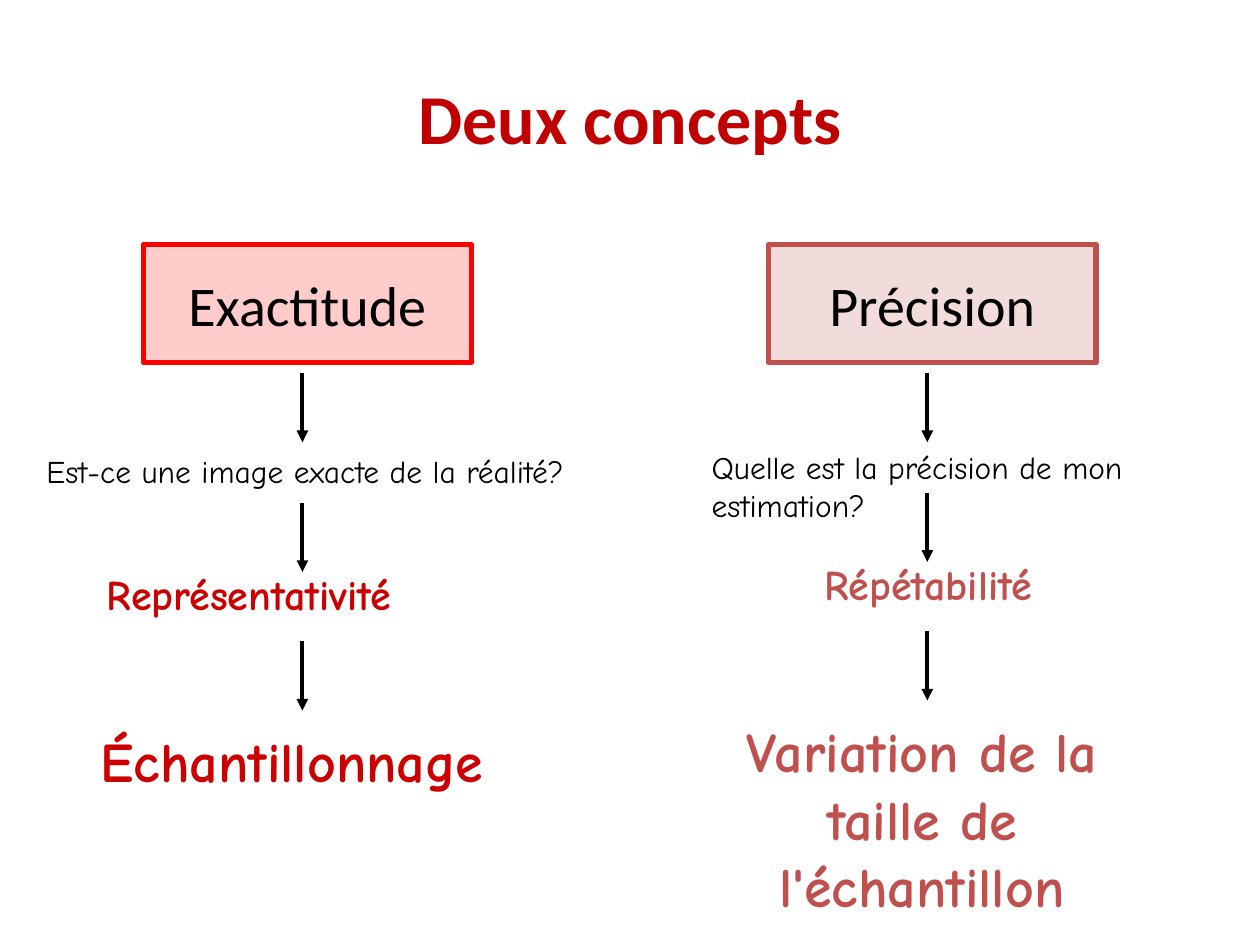
from dataclasses import dataclass

from lxml.etree import SubElement
from pptx import Presentation
from pptx.dml.color import RGBColor
from pptx.enum.shapes import MSO_CONNECTOR as Connector, MSO_SHAPE as Shape
from pptx.enum.text import MSO_ANCHOR as Anchor, PP_ALIGN as Align
from pptx.oxml.ns import qn
from pptx.util import Inches, Pt

COLORS = {
    "title": "C00000", "text": "000000", "accuracy": "FF0000",
    "accuracy_text": "CC0000", "precision": "C0504D",
}
TITLE_FONT, BODY_FONT = "Calibri", "Comic Neue"

presentation = Presentation()
presentation.slide_width, presentation.slide_height = Inches(10), Inches(7.5)
slide = presentation.slides.add_slide(presentation.slide_layouts[6])

# Grid of 100 columns and 75 rows; all places below are in its cells
COLUMN = presentation.slide_width / 100
ROW = presentation.slide_height / 75
BOX_TOP, BOX_WIDTH, BOX_HEIGHT = 19.4, 26, 9.4
BOX_OFFSET = 12.6
FIRST_ARROW, ARROW_LENGTH = 29.6, 5.5
LATER_ARROWS = (39.9, 50.9)


@dataclass(frozen=True)
class Area:
    left: float
    top: float
    width: float
    height: float

    def emu(self) -> tuple[int, ...]:
        return (round(self.left * COLUMN), round(self.top * ROW),
                round(self.width * COLUMN), round(self.height * ROW))


@dataclass(frozen=True)
class Label:
    text: str
    area: Area
    size: float
    color: str
    bold: bool = True
    align: Align = Align.CENTER
    font: str = BODY_FONT
    anchor: Anchor = Anchor.TOP


@dataclass(frozen=True)
class Concept:
    name: str
    axis: float
    rise: float
    color: str
    labels: tuple[Label, ...]


def write(shape, label: Label, wrap: bool = True) -> None:
    frame = shape.text_frame
    frame.word_wrap, frame.vertical_anchor = wrap, label.anchor
    paragraph = frame.paragraphs[0]
    paragraph.alignment = label.align
    run = paragraph.add_run()
    run.text = label.text
    formats = {"name": label.font, "size": Pt(label.size), "bold": label.bold}
    for attribute, value in formats.items():
        setattr(run.font, attribute, value)
    run.font.color.rgb = RGBColor.from_string(COLORS[label.color])


def add_label(label: Label) -> None:
    write(slide.shapes.add_textbox(*label.area.emu()), label)


def add_box(concept: Concept) -> None:
    area = Area(concept.axis - BOX_OFFSET, BOX_TOP, BOX_WIDTH, BOX_HEIGHT)
    shape = slide.shapes.add_shape(Shape.RECTANGLE, *area.emu())
    shape.shadow.inherit = False
    color = RGBColor.from_string(COLORS[concept.color])
    shape.fill.solid()
    shape.fill.fore_color.rgb = color
    fill_color = shape.fill._xPr.find(qn("a:solidFill"))[0]
    SubElement(fill_color, qn("a:alpha"), val="20000")
    shape.line.color.rgb, shape.line.width = color, Pt(3)
    write(shape, Label(concept.name, area, 32, "text", False,
                       font=TITLE_FONT, anchor=Anchor.MIDDLE), wrap=False)


def add_arrow(axis: float, top: float) -> None:
    x = round(axis * COLUMN)
    arrow = slide.shapes.add_connector(
        Connector.STRAIGHT, x, round(top * ROW),
        x, round((top + ARROW_LENGTH) * ROW))
    arrow.line.color.rgb = RGBColor.from_string(COLORS["text"])
    arrow.line.width = Pt(2.25)
    SubElement(arrow.line._get_or_add_ln(), qn("a:tailEnd"), type="triangle")
    SubElement(arrow._element.spPr, qn("a:effectLst"))


def add_concept(concept: Concept) -> None:
    add_box(concept)
    for label in concept.labels:
        add_label(label)
    for top in (FIRST_ARROW, *(row - concept.rise for row in LATER_ARROWS)):
        add_arrow(concept.axis, top)


# Title
add_label(Label("Deux concepts", Area(5, 5.4, 90, 7.7), 40, "title",
                font=TITLE_FONT, anchor=Anchor.MIDDLE))

# The two concepts, each a column of box, question, criterion and means
CONCEPTS = (
    Concept("Exactitude", 24, 0, "accuracy", (
        Label("Est-ce une image exacte de la réalité?",
              Area(2.7, 35.4, 48.8, 4), 18, "text", False, Align.LEFT),
        Label("Représentativité", Area(7.5, 44.6, 33.1, 5), 24,
              "accuracy_text", align=Align.LEFT),
        Label("Échantillonnage", Area(5.1, 57.2, 36.2, 6.3), 32,
              "accuracy_text"),
    )),
    Concept("Précision", 73.6, 0.8, "precision", (
        Label("Quelle est la précision de mon estimation?",
              Area(55.5, 35.1, 38.2, 7.1), 18, "text", False, Align.LEFT),
        Label("Répétabilité", Area(57.1, 43.8, 33.1, 5), 24, "precision"),
        Label("Variation de la taille de l'échantillon",
              Area(55.5, 56.4, 35.4, 17.2), 32, "precision"),
    )),
)
for concept in CONCEPTS:
    add_concept(concept)

presentation.save("out.pptx")
